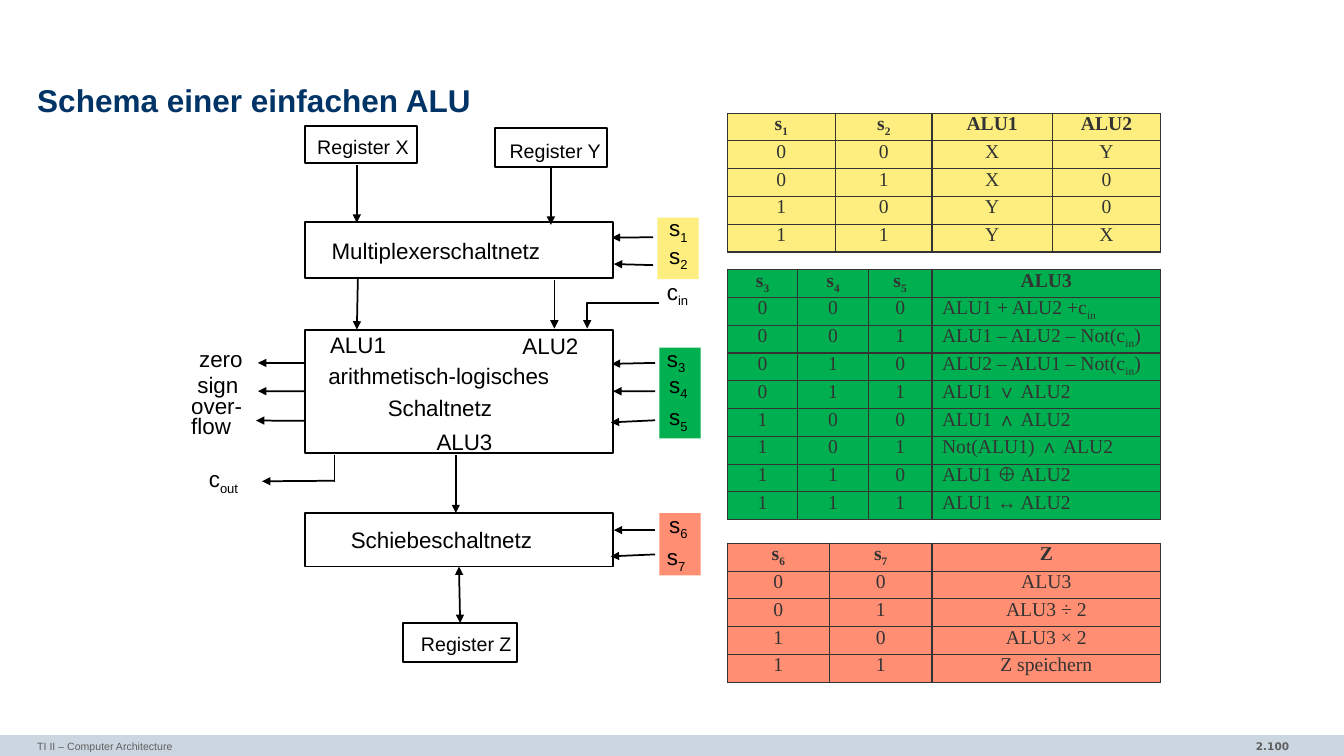
"""Build the slide showing the scheme of a simple ALU with its control tables."""
from lxml import etree
from pptx import Presentation
from pptx.dml.color import RGBColor
from pptx.enum.shapes import MSO_CONNECTOR, MSO_SHAPE
from pptx.enum.text import MSO_ANCHOR, MSO_AUTO_SIZE, PP_ALIGN
from pptx.oxml.ns import qn
from pptx.util import Pt

BLACK = RGBColor(0x00, 0x00, 0x00)
WHITE = RGBColor(0xFF, 0xFF, 0xFF)
NAVY = RGBColor(0x00, 0x33, 0x66)
GREY = RGBColor(0x5F, 0x5F, 0x5F)
DARK = RGBColor(0x33, 0x33, 0x33)
BAR = RGBColor(0xCC, 0xD6, 0xE0)
YELLOW = RGBColor(0xFD, 0xEE, 0x7F)
GREEN = RGBColor(0x00, 0xB0, 0x50)
RED = RGBColor(0xFF, 0x8E, 0x73)

LINE_WIDTH = 1.25
TABLE_LEFT = 519.5
ROW_HEIGHT = 19.85
TOP, LEFT, BOTTOM, RIGHT = range(4)

PATCHES = [
    (0, 525, 960, 15, BAR),
    (471, 366.5, 29.5, 44.6, RED),
    (471, 248.4, 29.5, 64.8, GREEN),
    (469.5, 155.5, 29.5, 44, YELLOW),
]
BLOCKS = {
    "register_x": (217.7, 90, 80, 26.6),
    "multiplexer": (217.7, 158.4, 220.3, 40.3),
    "alu": (217.7, 235.6, 220.3, 87.8),
    "register_z": (288, 445, 81.4, 28),
    "register_y": (353.5, 91.4, 80, 28),
    "shifter": (217.7, 366.5, 220.3, 38.2),
}
LABELS = [
    ("Register X", 226.6, 96.5, 69, 14),
    ("Register Y", 364, 99.4, 69, 14),
    ("Register Z", 300.7, 451.4, 68, 14),
    ("Multiplexerschaltnetz", 236.9, 169.2, 152, 16),
    ("ALU1", 235.8, 236.2, 43, 16),
    ("ALU2", 373.2, 237.4, 43, 16),
    ("arithmetisch-logisches", 234.5, 258.5, 162, 16),
    ("Schaltnetz", 277, 281.5, 77, 16),
    ("ALU3", 311.8, 306, 43, 16),
    ("Schiebeschaltnetz", 250.6, 375.8, 133, 16),
    ("zero", 142.3, 246.6, 36, 16),
    ("sign", 141, 264.8, 34, 16),
    ("over-", 136.6, 279.8, 40, 16),
    ("flow", 136.6, 294.5, 34, 16),
    ("c{out}", 149.2, 332.4, 26, 16),
    ("s{1}", 478, 153, 17, 16),
    ("s{2}", 478, 172.8, 17, 16),
    ("c{in}", 476.4, 198.5, 19, 16),
    ("s{3}", 476.4, 246.2, 17, 16),
    ("s{4}", 478, 264.8, 17, 16),
    ("s{5}", 478, 288, 17, 16),
    ("s{6}", 478, 365, 17, 16),
    ("s{7}", 476.4, 388.1, 17, 16),
]
ARROWS = [
    ((466.6, 169.5), (437, 169.7)),
    ((466.6, 189.4), (438.5, 188.6)),
    ((468, 259.2), (437, 259.9)),
    ((468, 279.4), ("alu", RIGHT)),
    ((468, 300.2), (436.3, 301.7)),
    ((468, 378.7), (438.5, 378.7)),
    ((468, 396), (436.3, 397.4)),
    ((218.2, 259.2), (184.3, 259.2)),
    (("alu", LEFT), (184.3, 279.4)),
    ((218.2, 300.6), (182.9, 300.4)),
    ((239, 343.4), (187.2, 343.8)),
    (("register_y", BOTTOM), (393.5, 160.6)),
    ((254.9, 118.1), (254.9, 159.1)),
    ((255.6, 199.4), (254.9, 235.4)),
    ((396, 200.2), (396, 234.7)),
    ((325.6, 324.7), (325.6, 366.5)),
]
TWO_WAY_ARROW = (("register_z", TOP), ("shifter", BOTTOM))
CARRY_OUT_STEM = ((239, 324.7), (239, 344.2))
CARRY_IN_PATH = [(470.9, 216.4), (419.4, 216.4), (419.4, 234.7)]

TABLES = [
    (80.8, YELLOW, (77.3, 69, 85.9, 77.4), PP_ALIGN.CENTER, [
        ("s{1}", "s{2}", "ALU1", "ALU2"),
        ("0", "0", "X", "Y"),
        ("0", "1", "X", "0"),
        ("1", "0", "Y", "0"),
        ("1", "1", "Y", "X"),
    ]),
    (388.1, RED, (72.9, 73.4, 163.3), PP_ALIGN.CENTER, [
        ("s{6}", "s{7}", "Z"),
        ("0", "0", "ALU3"),
        ("0", "1", "ALU3 ÷ 2"),
        ("1", "0", "ALU3 × 2"),
        ("1", "1", "Z speichern"),
    ]),
    (192.6, GREEN, (50.4, 50.4, 45.4, 163.4), PP_ALIGN.LEFT, [
        ("s{3}", "s{4}", "s{5}", "ALU3"),
        ("0", "0", "0", "ALU1 + ALU2 +c{in}"),
        ("0", "0", "1", "ALU1 – ALU2 – Not(c{in})"),
        ("0", "1", "0", "ALU2 – ALU1 – Not(c{in})"),
        ("0", "1", "1", "ALU1 ∨ ALU2"),
        ("1", "0", "0", "ALU1 ∧ ALU2"),
        ("1", "0", "1", "Not(ALU1) ∧ ALU2"),
        ("1", "1", "0", "ALU1 ⊕ ALU2"),
        ("1", "1", "1", "ALU1 ↔ ALU2"),
    ]),
]


def points(values):
    return [Pt(value) for value in values]


def write(para, text, color, **formats):
    for index, part in enumerate(text.replace("}", "{").split("{")):
        if not part:
            continue
        span = para.add_run()
        span.text = part
        span.font.color.rgb = color
        for name, value in formats.items():
            setattr(span.font, name, value)
        if index % 2:
            span.font._element.set("baseline", "-25000")


def add_text(page, place, text, color, align=PP_ALIGN.LEFT, frame_formats=None, **formats):
    frame = page.shapes.add_textbox(*points(place)).text_frame
    settings = {"margin_left": 0, "margin_right": 0, "margin_top": 0, "margin_bottom": 0,
                "word_wrap": True, **(frame_formats or {})}
    for name, value in settings.items():
        setattr(frame, name, value)
    para = frame.paragraphs[0]
    para.alignment = align
    write(para, text, color, **formats)
    return para


def add_block(page, place, color, outlined=False):
    block = page.shapes.add_shape(MSO_SHAPE.RECTANGLE, *points(place))
    block.shadow.inherit = False
    block.fill.solid()
    block.fill.fore_color.rgb = color
    if outlined:
        block.line.color.rgb = BLACK
        block.line.width = Pt(LINE_WIDTH)
    else:
        block.line.fill.background()
    return block


def style_line(shape, ends):
    shape.line.color.rgb = BLACK
    shape.line.width = Pt(LINE_WIDTH)
    for end in ends:
        etree.SubElement(shape.line._get_or_add_ln(), qn(f"a:{end}"), type="triangle")


def add_line(page, blocks, start, finish, ends=("tailEnd",)):
    spots = [(0, 0) if isinstance(spot[0], str) else spot for spot in (start, finish)]
    line = page.shapes.add_connector(MSO_CONNECTOR.STRAIGHT, *points(spots[0] + spots[1]))
    for spot, connect in ((start, line.begin_connect), (finish, line.end_connect)):
        if isinstance(spot[0], str):
            connect(blocks[spot[0]], spot[1])
    style_line(line, ends)
    etree.SubElement(line._element.spPr, qn("a:effectLst"))


def add_borders(cell):
    properties = cell._tc.get_or_add_tcPr()
    for index, side in enumerate(("lnL", "lnR", "lnT", "lnB")):
        border = etree.Element(qn(f"a:{side}"), w=str(Pt(1)))
        fill = etree.SubElement(border, qn("a:solidFill"))
        etree.SubElement(fill, qn("a:srgbClr"), val=str(DARK))
        properties.insert(index, border)


def add_control_table(page, top, color, widths, last_align, rows):
    place = (TABLE_LEFT, top, sum(widths), ROW_HEIGHT * len(rows))
    table = page.shapes.add_table(len(rows), len(widths), *points(place)).table
    table.first_row = table.horz_banding = False
    for column, width in zip(table.columns, widths):
        column.width = Pt(width)
    for y, row in enumerate(rows):
        table.rows[y].height = Pt(ROW_HEIGHT)
        for x, text in enumerate(row):
            cell = table.cell(y, x)
            cell.margin_top = cell.margin_bottom = 0
            cell.fill.solid()
            cell.fill.fore_color.rgb = color
            add_borders(cell)
            para = cell.text_frame.paragraphs[0]
            is_formula = y > 0 and x == len(row) - 1
            para.alignment = last_align if is_formula else PP_ALIGN.CENTER
            write(para, text, DARK, name="Times New Roman", size=Pt(14), bold=y == 0)


def main():
    deck = Presentation()
    deck.slide_width, deck.slide_height = Pt(960), Pt(540)
    page = deck.slides.add_slide(deck.slide_layouts[6])
    for *place, color in PATCHES:
        add_block(page, place, color)
    add_text(page, (799.2, 525, 121.7, 15.8), "2.100", GREY, PP_ALIGN.RIGHT,
             {"margin_top": Pt(3.6)}, name="DejaVu Sans", size=Pt(7.5), bold=True)
    title = add_text(page, (26.6, 56.6, 907.2, 33.8), "Schema einer einfachen ALU", NAVY,
                     frame_formats={"vertical_anchor": MSO_ANCHOR.MIDDLE},
                     name="Arial", size=Pt(22.5), bold=True)
    title.line_spacing = 0.85
    add_text(page, (26.6, 525, 627.8, 15), "TI II – Computer Architecture", GREY,
             frame_formats={"margin_top": Pt(3.6)}, name="Arial", size=Pt(7.5))
    blocks = {name: add_block(page, place, WHITE, True) for name, place in BLOCKS.items()}
    for text, left, top, width, size in LABELS:
        add_text(page, (left, top, width, size * 1.21), text, BLACK,
                 frame_formats={"word_wrap": False, "auto_size": MSO_AUTO_SIZE.SHAPE_TO_FIT_TEXT},
                 name="Arial", size=Pt(size))
    for start, finish in ARROWS:
        add_line(page, blocks, start, finish)
    add_line(page, blocks, *TWO_WAY_ARROW, ends=("headEnd", "tailEnd"))
    add_line(page, blocks, *CARRY_OUT_STEM, ends=())
    corners = [points(corner) for corner in CARRY_IN_PATH]
    builder = page.shapes.build_freeform(*corners[0])
    builder.add_line_segments(corners[1:], close=False)
    carry_in = builder.convert_to_shape()
    carry_in.shadow.inherit = False
    carry_in.fill.background()
    style_line(carry_in, ("tailEnd",))
    for control_table in TABLES:
        add_control_table(page, *control_table)
    deck.save("out.pptx")


if __name__ == "__main__":
    main()
